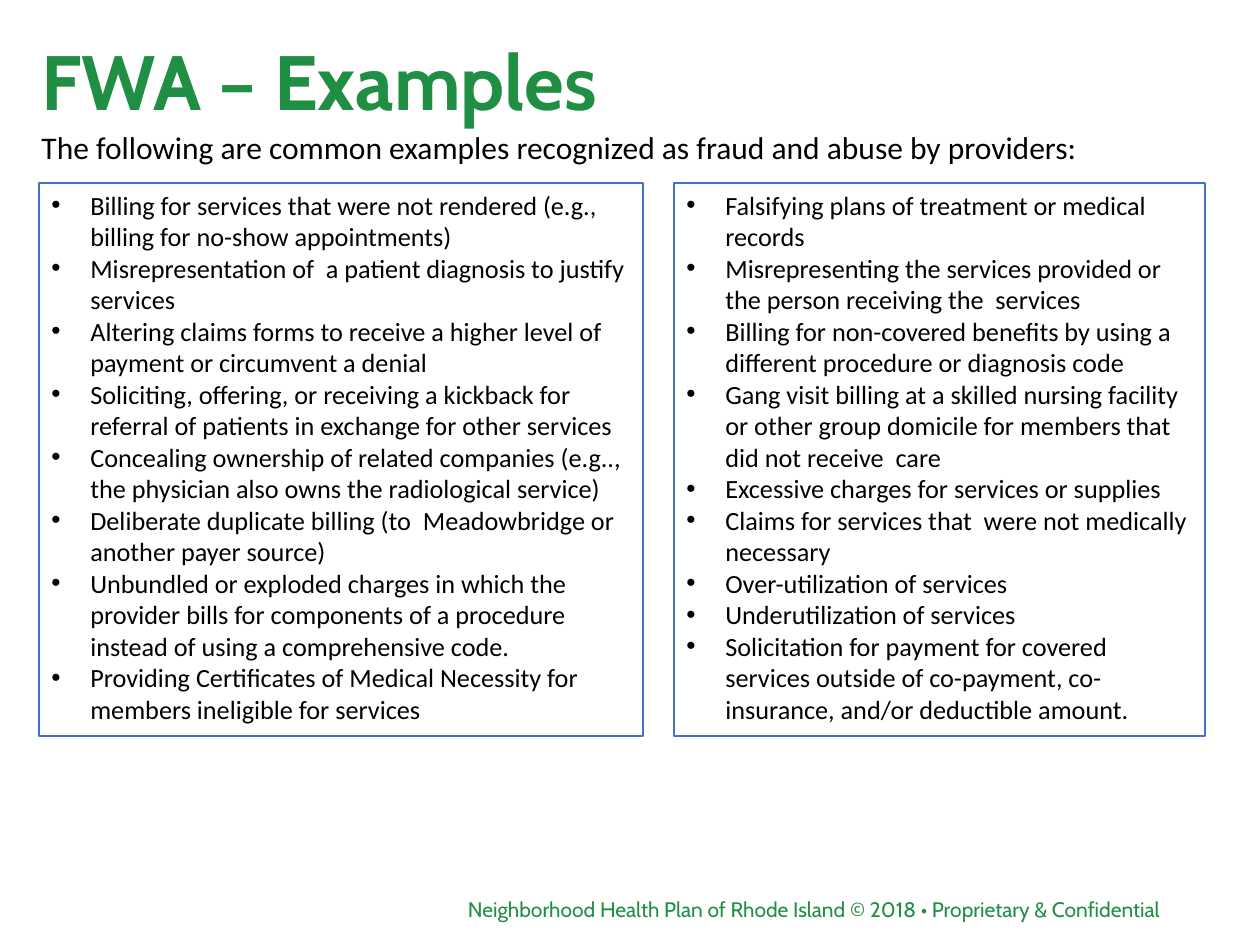
import pptx
import pptx.dml.color
import pptx.enum.shapes
import pptx.enum.text
import pptx.oxml.ns
import pptx.util
import lxml.etree

ANCHOR = pptx.enum.text.MSO_ANCHOR
ALIGN = pptx.enum.text.PP_ALIGN
GREEN = "208F44"
BLUE = "4472C4"
BLACK = "000000"


def px(length):
    return pptx.util.Emu(round(length * 914400 / 126))


def write_text(shape, lines, size, font="Calibri", color=BLACK, bold=False,
               align=ALIGN.LEFT, anchor=ANCHOR.TOP, spacing=1.0, indent=0):
    frame = shape.text_frame
    frame.word_wrap = True
    frame.vertical_anchor = anchor
    frame.text = "\n".join(lines)
    for paragraph in frame.paragraphs:
        paragraph.alignment = align
        paragraph.line_spacing = spacing
        if indent:
            properties = paragraph._p.get_or_add_pPr()
            properties.set("marL", str(px(indent)))
            properties.set("indent", str(-px(indent)))
            bullet_font = lxml.etree.SubElement(properties, pptx.oxml.ns.qn("a:buFont"))
            bullet_font.set("typeface", "Arial")
            bullet = lxml.etree.SubElement(properties, pptx.oxml.ns.qn("a:buChar"))
            bullet.set("char", "•")
        paragraph.font.size = pptx.util.Pt(size)
        paragraph.font.name = font
        paragraph.font.bold = bold
        paragraph.font.color.rgb = pptx.dml.color.RGBColor.from_string(color)


presentation = pptx.Presentation()
presentation.slide_width = px(1260)
presentation.slide_height = px(945)
slide = presentation.slides.add_slide(presentation.slide_layouts[6])

title = slide.shapes.add_textbox(px(29), px(19), px(1086), px(134))
write_text(title, ["FWA – Examples"], 44, font="Cabin", color=GREEN, bold=True,
           anchor=ANCHOR.MIDDLE, spacing=0.9)

footer = slide.shapes.add_textbox(px(417), px(892), px(756), px(34))
write_text(footer, ["Neighborhood Health Plan of Rhode Island © 2018 • Proprietary & Confidential"],
           12, font="Cabin", color=GREEN, align=ALIGN.RIGHT, anchor=ANCHOR.MIDDLE)

introduction = slide.shapes.add_textbox(px(29), px(122), px(1103), px(50))
write_text(introduction,
           ["The following are common examples recognized as fraud and abuse by providers:"], 18)

example_boxes = [
    (39, 604, [
        "Billing for services that were not rendered (e.g., billing for no-show appointments)",
        "Misrepresentation of  a patient diagnosis to justify  services",
        "Altering claims forms to receive a higher level of payment or circumvent a denial",
        "Soliciting, offering, or receiving a kickback for referral of patients in exchange for other services",
        "Concealing ownership of related companies (e.g.., the physician also owns the radiological service)",
        "Deliberate duplicate billing (to  Meadowbridge or another payer source)",
        "Unbundled or exploded charges in which the provider bills for components of a procedure "
        "instead of using a comprehensive code.",
        "Providing Certificates of Medical Necessity for members ineligible for services",
    ]),
    (674, 531, [
        "Falsifying plans of treatment or medical records",
        "Misrepresenting the services provided or the person receiving the  services",
        "Billing for non-covered benefits by using a different procedure or diagnosis code",
        "Gang visit billing at a skilled nursing facility or other group domicile for members "
        "that did not receive  care",
        "Excessive charges for services or supplies",
        "Claims for services that  were not medically necessary",
        "Over-utilization of services",
        "Underutilization of services",
        "Solicitation for payment for covered services outside of co-payment, co-insurance, "
        "and/or deductible amount.",
    ]),
]
for left, width, examples in example_boxes:
    box = slide.shapes.add_shape(pptx.enum.shapes.MSO_SHAPE.RECTANGLE,
                                 px(left), px(183), px(width), px(553))
    box.shadow.inherit = False
    box.fill.background()
    box.line.color.rgb = pptx.dml.color.RGBColor.from_string(BLUE)
    box.line.width = pptx.util.Pt(0.75)
    write_text(box, examples, 15, indent=39)

presentation.save("out.pptx")
